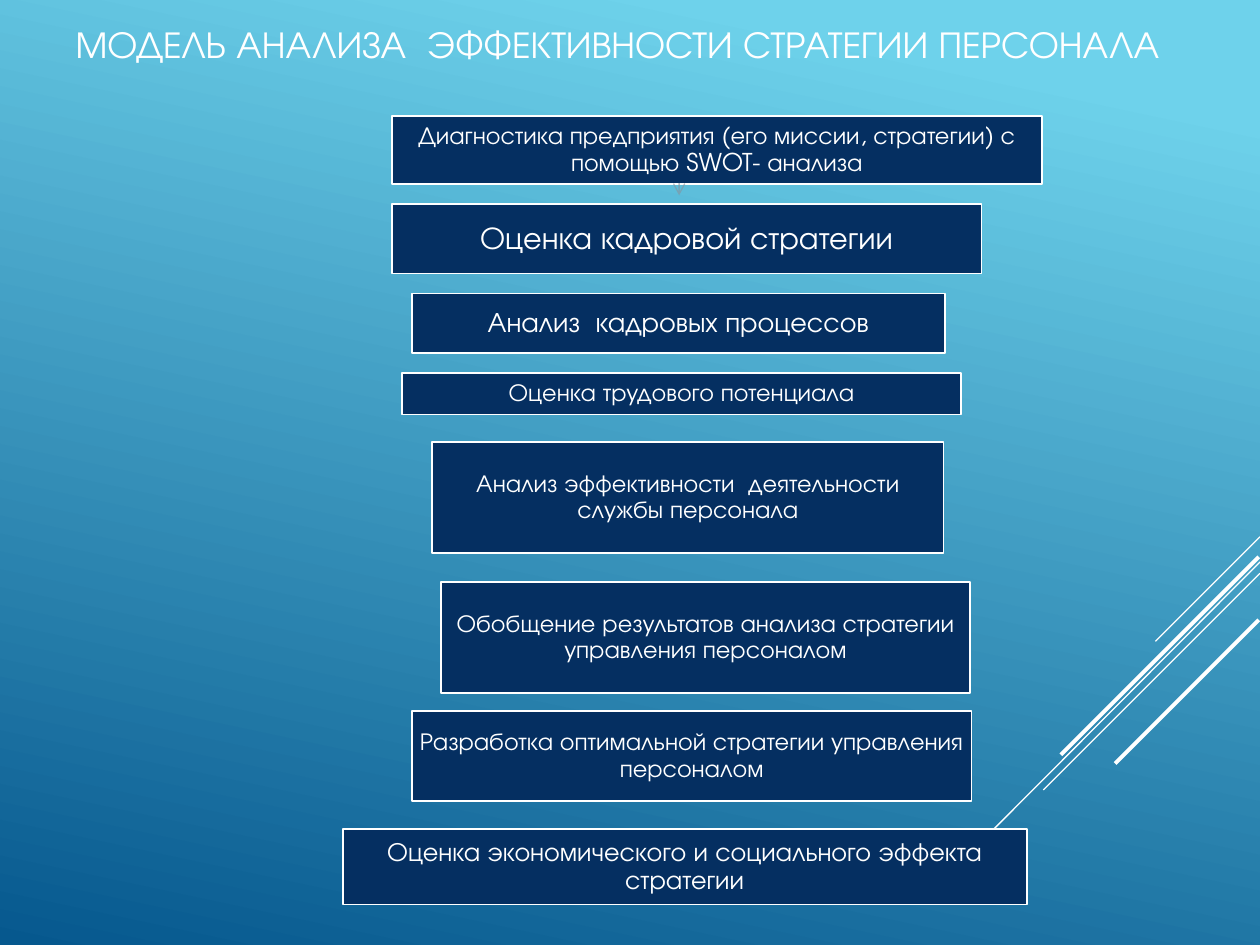
"""Build the slide on the analysis model for personnel strategy."""
from dataclasses import dataclass
from pptx import Presentation
from pptx.dml.color import RGBColor
from pptx.enum import text
from pptx.enum.shapes import MSO_CONNECTOR, MSO_SHAPE
from pptx.oxml.ns import qn
from pptx.util import Inches, Pt
from lxml import etree


@dataclass
class Theme:
    font: str = "TeX Gyre Adventor"
    white: str = "FFFFFF"
    navy: str = "052F61"
    grey: str = "89919C"
    sky: str = "6ED2EB"
    deep: str = "06588E"
    title: float = 21.6
    large: float = 18
    mid: float = 16
    last: float = 15
    base: float = 14


theme = Theme()


def write(shape, words, size, pad, align):
    frame = shape.text_frame
    frame.text = words
    form = {"word_wrap": True, "auto_size": text.MSO_AUTO_SIZE.NONE,
            "vertical_anchor": text.MSO_ANCHOR.MIDDLE}
    for side in ("left", "right", "top", "bottom"):
        form[f"margin_{side}"] = Inches(pad)
    for key, val in form.items():
        setattr(frame, key, val)
    para = frame.paragraphs[0]
    para.alignment = align
    para.line_spacing = 0.9
    font = para.runs[0].font
    for key, val in {"name": theme.font, "size": Pt(size), "bold": False}.items():
        setattr(font, key, val)
    font.color.rgb = RGBColor.from_string(theme.white)


def draw(start, end, color, width):
    ends = [Inches(n) for n in (*start, *end)]
    line = slide.shapes.add_connector(MSO_CONNECTOR.STRAIGHT, *ends)
    line.line.color.rgb = RGBColor.from_string(color)
    line.line.width = Pt(width)
    etree.SubElement(line._element.spPr, qn("a:effectLst"))
    return line


deck = Presentation()
deck.slide_width, deck.slide_height = Inches(10), Inches(7.5)
slide = deck.slides.add_slide(deck.slide_layouts[5])

fill = slide.background.fill
fill.gradient()
fill.gradient_angle = 360 - 102
for stop, place, color in zip(fill.gradient_stops, (0.1, 1), (theme.sky, theme.deep)):
    stop.position = place
    stop.color.rgb = RGBColor.from_string(color)

rays = [
    ((10, 4.26), (9.17, 5.09), 0.75),
    ((10, 4.46), (7.3, 7.17), 0.75),
    ((10, 4.55), (8.28, 6.27), 0.75),
    ((9.99, 4.42), (8.42, 5.99), 2.25),
    ((9.99, 4.92), (8.85, 6.06), 2.25),
]
for start, end, width in rays:
    draw(start, end, theme.white, width)

title = slide.shapes.title
spot = {"left": 0.5, "top": 0.14, "width": 9, "height": 0.46}
for key, val in spot.items():
    setattr(title, key, Inches(val))
write(title, "МОДЕЛЬ АНАЛИЗА  ЭФФЕКТИВНОСТИ СТРАТЕГИИ ПЕРСОНАЛА",
      theme.title, 0.1, text.PP_ALIGN.LEFT)

steps = [
    (3.11, 0.92, 5.16, 0.54, theme.base,
     "Диагностика предприятия (его миссии, стратегии) с помощью SWOT- анализа"),
    (3.11, 1.62, 4.68, 0.55, theme.large, "Оценка кадровой стратегии"),
    (3.27, 2.33, 4.23, 0.47, theme.mid, "Анализ  кадровых процессов"),
    (3.19, 2.96, 4.44, 0.33, theme.base, "Оценка трудового потенциала"),
    (3.43, 3.51, 4.06, 0.88, theme.base,
     "Анализ эффективности  деятельности службы персонала"),
    (3.5, 4.62, 4.2, 0.88, theme.base,
     "Обобщение результатов анализа стратегии управления персоналом"),
    (3.27, 5.64, 4.44, 0.72, theme.base,
     "Разработка оптимальной стратегии управления персоналом"),
    (2.72, 6.58, 5.43, 0.6, theme.last,
     "Оценка экономического и социального эффекта стратегии"),
]
for *area, size, words in steps:
    box = slide.shapes.add_shape(MSO_SHAPE.RECTANGLE, *[Inches(n) for n in area])
    box.shadow.inherit = False
    box.fill.solid()
    box.fill.fore_color.rgb = RGBColor.from_string(theme.navy)
    box.line.color.rgb = RGBColor.from_string(theme.white)
    box.line.width = Pt(1)
    pad = 0.07 if size >= theme.mid else 0.06
    write(box, words, size, pad, text.PP_ALIGN.CENTER)

arrow = draw((5.39, 1.47), (5.39, 1.55), theme.grey, 0.75)
line = arrow.line._get_or_add_ln()
tint = line.find(".//" + qn("a:srgbClr"))
etree.SubElement(tint, qn("a:alpha"), val="60000")
etree.SubElement(line, qn("a:tailEnd"), type="arrow")

deck.save("out.pptx")
